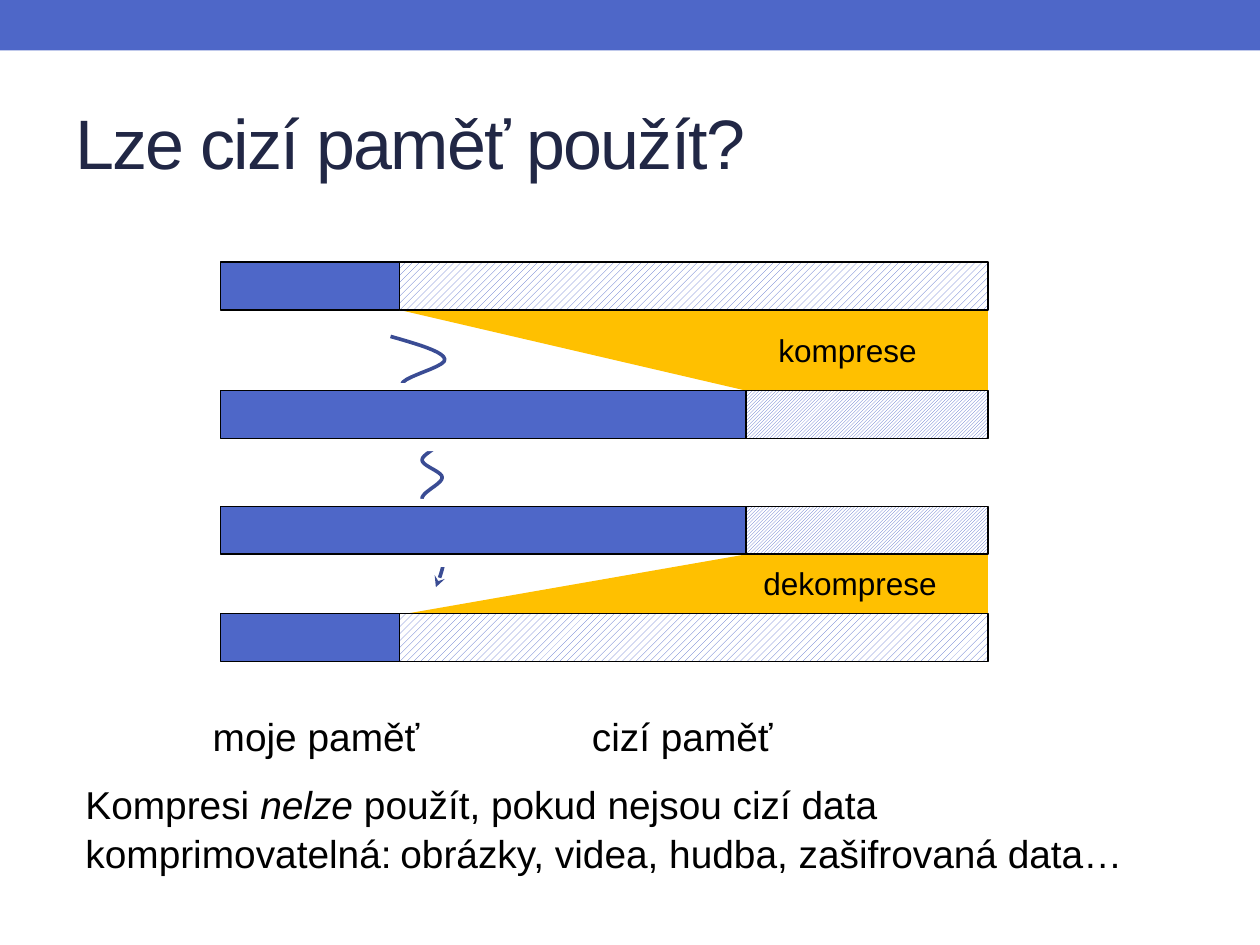
"""Build the slide on using foreign memory through compression."""
from dataclasses import dataclass

from lxml import etree
from pptx import Presentation
from pptx.dml.color import RGBColor
from pptx.enum.dml import MSO_PATTERN
from pptx.enum.shapes import MSO_SHAPE
from pptx.enum.text import MSO_ANCHOR, MSO_AUTO_SIZE
from pptx.oxml.ns import qn
from pptx.util import Emu, Pt

PX = 9144
RECT, TRIANGLE = MSO_SHAPE.RECTANGLE, MSO_SHAPE.RIGHT_TRIANGLE
WIDE, DENSE = MSO_PATTERN.WIDE_UPWARD_DIAGONAL, MSO_PATTERN.DARK_UPWARD_DIAGONAL
TOP, MIDDLE = MSO_ANCHOR.TOP, MSO_ANCHOR.MIDDLE
COLORS = {"blue": "4E67C8", "curve": "3A4C94", "gold": "FFC000",
          "title": "212745", "black": "000000", "white": "FFFFFF"}
LEFT, RIGHT, BAR_H = 175, 784, 38
SHORT, LONG = 317, 592


@dataclass
class MemoryBar:
    y: int
    split: int
    pattern: MSO_PATTERN


@dataclass
class Band:
    y: int
    h: int
    rising: bool


@dataclass
class Label:
    box: tuple[int, int, int, int]
    runs: list[tuple[str, bool]]
    size: float
    color: str = "black"
    anchor: MSO_ANCHOR = TOP
    grow: bool = False
    tabs: tuple[int, ...] = ()
    line_spacing: float = 1.0
    tracking: int = 0


BARS = [MemoryBar(208, SHORT, WIDE), MemoryBar(310, LONG, DENSE),
        MemoryBar(402, LONG, DENSE), MemoryBar(487, SHORT, WIDE)]
BANDS = [Band(246, 64, False), Band(440, 48, True)]
MASKS = [(292, 304, 125, 54), (292, 396, 125, 54)]
CURVE_START = (310, 267)
CURVES = [
    ((331, 273), (352, 279), (353, 285)), ((355, 291), (319, 299), (319, 305)),
    ((318, 311), (351, 315), (352, 320)), ((354, 324), (328, 329), (327, 334)),
    ((327, 339), (349, 343), (350, 348)), ((352, 354), (335, 360), (335, 365)),
    ((335, 370), (351, 374), (351, 379)), ((351, 384), (334, 391), (335, 396)),
    ((335, 402), (354, 408), (354, 414)), ((354, 420), (337, 427), (337, 432)),
    ((337, 437), (351, 436), (352, 442)), ((354, 447), (346, 466), (346, 466)),
]
LABELS = [
    Label((50, 58, 900, 108), [("Lze cizí paměť použít?", False)], 40,
          color="title", anchor=MIDDLE, tracking=-100),
    Label((608, 258, 183, 40), [("komprese", False)], 18, grow=True),
    Label((596, 443, 183, 40), [("dekomprese", False)], 18, grow=True),
    Label((17, 561, 900, 45), [("\tmoje paměť\tcizí paměť", False)], 22.2,
          tabs=(142, 443)),
    Label((58, 613, 920, 91),
          [("Kompresi ", False), ("nelze", True),
           (" použít, pokud nejsou cizí data\n", False),
           ("komprimovatelná:\tobrázky, videa, hudba, zašifrovaná data…", False)],
          22.2, line_spacing=1.05),
]


def rgb(name: str) -> RGBColor:
    return RGBColor.from_string(COLORS[name])


def add_block(s, box: tuple, color: str, kind=RECT, pattern=None, outlined=False):
    sp = s.shapes.add_shape(kind, *(Emu(v * PX) for v in box))
    sp.shadow.inherit = False
    if pattern is None:
        sp.fill.solid()
        sp.fill.fore_color.rgb = rgb(color)
    else:
        sp.fill.patterned()
        sp.fill.pattern = pattern
        sp.fill.fore_color.rgb = rgb(color)
        sp.fill.back_color.rgb = rgb("white")
    if outlined:
        sp.line.color.rgb = rgb("black")
        sp.line.width = Pt(1)
    else:
        sp.line.fill.background()
    return sp


def add_bar(s, bar: MemoryBar) -> None:
    add_block(s, (bar.split, bar.y, RIGHT - bar.split, BAR_H), "blue",
              pattern=bar.pattern, outlined=True)
    add_block(s, (LEFT, bar.y, bar.split - LEFT, BAR_H), "blue", outlined=True)


def add_band(s, band: Band) -> None:
    wedge = add_block(s, (SHORT, band.y, LONG - SHORT, band.h), "gold", TRIANGLE)
    if band.rising:
        wedge._element.spPr.find(qn("a:xfrm")).set("flipH", "1")
    else:
        wedge.rotation = 180
    add_block(s, (LONG, band.y, RIGHT - LONG, band.h), "gold")


def bezier_points(start: tuple, curve: tuple, steps: int = 10) -> list:
    points = (start, *curve)
    result = []
    for i in range(1, steps + 1):
        t = i / steps
        weights = ((1 - t) ** 3, 3 * t * (1 - t) ** 2, 3 * t * t * (1 - t), t ** 3)
        result.append(tuple(round(PX * sum(w * p[axis] for w, p in zip(weights, points)))
                            for axis in (0, 1)))
    return result


def add_wavy_arrow(s) -> None:
    fb = s.shapes.build_freeform(CURVE_START[0] * PX, CURVE_START[1] * PX)
    start = CURVE_START
    for curve in CURVES:
        fb.add_line_segments(bezier_points(start, curve), close=False)
        start = curve[-1]
    sp = fb.convert_to_shape()
    sp.shadow.inherit = False
    sp.fill.background()
    sp.line.color.rgb = rgb("curve")
    sp.line.width = Pt(2.08)
    ln = sp._element.spPr.find(qn("a:ln"))
    etree.SubElement(ln, qn("a:tailEnd"), type="stealth")


def add_label(s, label: Label) -> None:
    tf = s.shapes.add_textbox(*(Emu(v * PX) for v in label.box)).text_frame
    tf.word_wrap = True
    tf.vertical_anchor = label.anchor
    if label.grow:
        tf.auto_size = MSO_AUTO_SIZE.SHAPE_TO_FIT_TEXT
    p = tf.paragraphs[0]
    p.line_spacing = label.line_spacing
    if label.tabs:
        tab_list = etree.SubElement(p._p.get_or_add_pPr(), qn("a:tabLst"))
        for pos in label.tabs:
            etree.SubElement(tab_list, qn("a:tab"), pos=str(pos * PX), algn="l")
    for text, italic in label.runs:
        r = p.add_run()
        r.text = text.rstrip("\n")
        r.font.name = "Arial"
        r.font.size = Pt(label.size)
        r.font.color.rgb = rgb(label.color)
        if italic:
            r.font.italic = True
        if label.tracking:
            r._r.get_or_add_rPr().set("spc", str(label.tracking))
        if text.endswith("\n"):
            p.add_line_break()


def main() -> None:
    prs = Presentation()
    prs.slide_width, prs.slide_height = Emu(1000 * PX), Emu(750 * PX)
    s = prs.slides.add_slide(prs.slide_layouts[6])
    add_block(s, (0, 0, 1000, 40), "blue")
    add_wavy_arrow(s)
    for mask in MASKS:
        add_block(s, mask, "white")
    for band in BANDS:
        add_band(s, band)
    for bar in BARS:
        add_bar(s, bar)
    for label in LABELS:
        add_label(s, label)
    prs.save("out.pptx")


if __name__ == "__main__":
    main()
